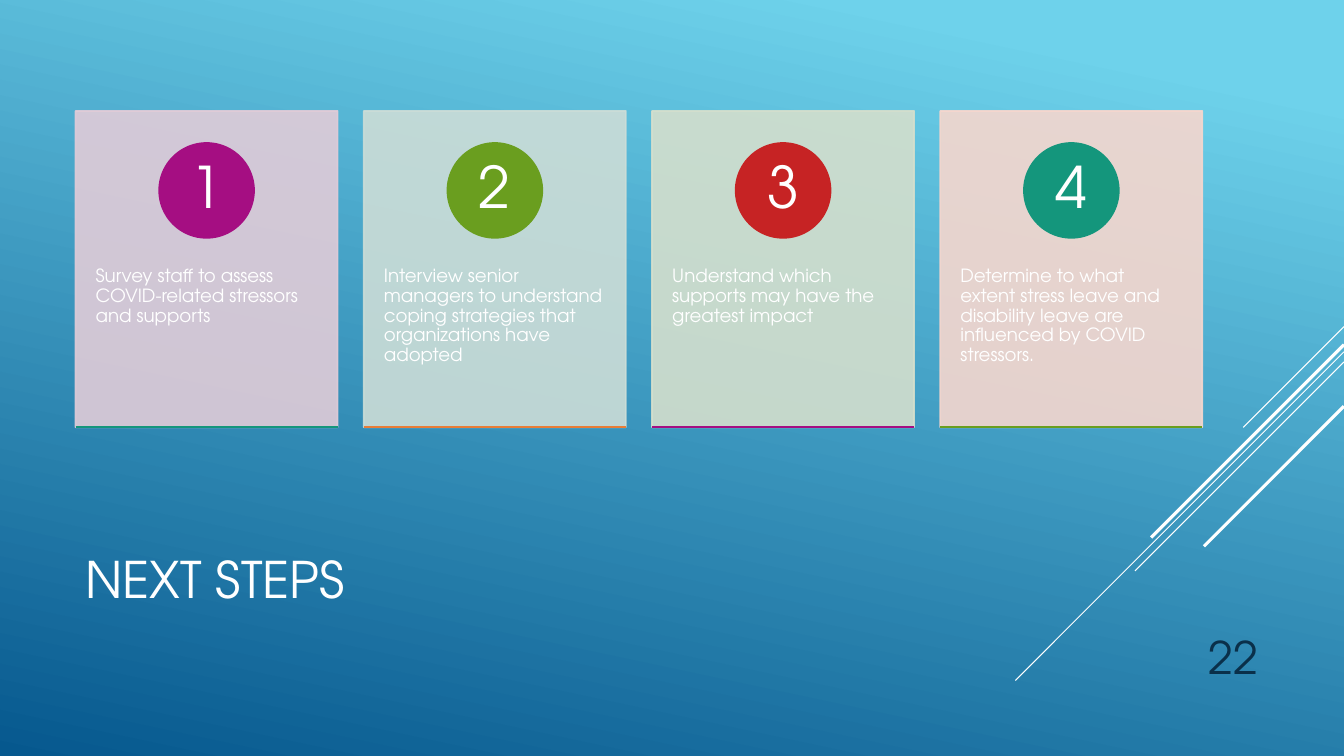
from lxml.etree import SubElement
from pptx import Presentation
from pptx.dml.color import RGBColor
from pptx.enum.shapes import MSO_CONNECTOR, MSO_SHAPE
from pptx.enum.text import MSO_ANCHOR, PP_ALIGN
from pptx.oxml.ns import qn
from pptx.util import Pt

FONT = "TeX Gyre Adventor"
WHITE = RGBColor(0xFF, 0xFF, 0xFF)
NAVY = RGBColor(0x0A, 0x30, 0x4A)
SKY = RGBColor(0x6E, 0xD2, 0xEB)
OCEAN = RGBColor(0x06, 0x58, 0x8E)
PURPLE = RGBColor(0xA5, 0x0E, 0x82)
GREEN = RGBColor(0x6A, 0x9E, 0x1F)
RED = RGBColor(0xC6, 0x23, 0x24)
TEAL = RGBColor(0x14, 0x96, 0x7C)
ORANGE = RGBColor(0xE8, 0x7D, 0x37)
MAUVE = RGBColor(0xE1, 0xCC, 0xD8)
MIST = RGBColor(0xCC, 0xDD, 0xD7)
SAGE = RGBColor(0xD4, 0xDF, 0xCD)
PEACH = RGBColor(0xF6, 0xD7, 0xCE)

STEPS = [
    ("Survey staff to assess COVID-related stressors and supports", MAUVE, PURPLE, TEAL),
    ("Interview senior managers to understand coping strategies that organizations have adopted",
     MIST, GREEN, ORANGE),
    ("Understand which supports may have the greatest impact", SAGE, RED, PURPLE),
    ("Determine to what extent stress leave and disability leave are influenced by COVID stressors.",
     PEACH, TEAL, GREEN),
]
SLIDE_WIDTH, SLIDE_HEIGHT = 960, 540
CARD_PITCH, CARD_WIDTH, CARD_HEIGHT = 205.9, 187.2, 226
BADGE_SIZE, BADGE_OFFSET = 67.7, 23
RAYS = [(233.3, 72, 0.75), (251.3, 234.7, 0.75), (258.5, 149.3, 0.75),
        (246.2, 137.7, 2.25), (290.2, 100, 2.25)]


def write_text(shape, text, size, color, align, frame_format, line_spacing=1.0):
    """Put one styled paragraph into a shape."""
    frame = shape.text_frame
    frame.word_wrap = True
    for name, value in frame_format.items():
        setattr(frame, name, value)
    paragraph = frame.paragraphs[0]
    paragraph.text = text
    paragraph.alignment = align
    paragraph.line_spacing = line_spacing
    font = paragraph.runs[0].font
    for name, value in {"name": FONT, "size": Pt(size)}.items():
        setattr(font, name, value)
    font.color.rgb = color


def add_filled_shape(slide, kind, box, color, opacity=100):
    """Add a preset shape whose fill and line share one colour."""
    shape = slide.shapes.add_shape(kind, *map(Pt, box))
    shape.shadow.inherit = False
    shape.fill.solid()
    shape.fill.fore_color.rgb = color
    shape.line.color.rgb = color
    shape.line.width = Pt(1.25)
    if opacity < 100:
        for color_element in shape.element.spPr.iter(qn("a:srgbClr")):
            SubElement(color_element, qn("a:alpha"), val=str(opacity * 1000))
    return shape


def add_line(slide, start, end, color, width):
    """Draw a straight line without a shadow."""
    connector = slide.shapes.add_connector(MSO_CONNECTOR.STRAIGHT, *map(Pt, start + end))
    connector.line.color.rgb = color
    connector.line.width = Pt(width)
    SubElement(connector.element.spPr, qn("a:effectLst"))


def add_background(slide):
    """Fill the slide with a slanted blue gradient."""
    fill = slide.background.fill
    fill.gradient()
    fill.gradient_angle = 258
    for stop, position, color in zip(fill.gradient_stops, (0.1, 1), (SKY, OCEAN)):
        stop.position = position
        stop.color.rgb = color


def add_rays(slide, right):
    """Draw diagonal lines running down and left from the right edge."""
    for top, length, width in RAYS:
        add_line(slide, (right, top), (right - length, top + length), WHITE, width)


def add_text_box(slide, box, text, size, color, align, anchor):
    """Add a free-standing line of text."""
    shape = slide.shapes.add_textbox(*map(Pt, box))
    write_text(shape, text, size, color, align, {"vertical_anchor": anchor})


def add_step_card(slide, left, top, number, step):
    """Add a tinted card with a numbered badge and a coloured base line."""
    text, tint, badge_color, base_color = step
    card = add_filled_shape(slide, MSO_SHAPE.RECTANGLE,
                            (left, top, CARD_WIDTH, CARD_HEIGHT), tint, 90)
    write_text(card, text, 13, WHITE, PP_ALIGN.LEFT, {
        "vertical_anchor": MSO_ANCHOR.TOP, "margin_left": Pt(14.4),
        "margin_right": Pt(14.4), "margin_top": Pt(111.6), "margin_bottom": Pt(26)}, 0.9)
    badge_left = left + (CARD_WIDTH - BADGE_SIZE) / 2
    badge = add_filled_shape(slide, MSO_SHAPE.OVAL,
                             (badge_left, top + BADGE_OFFSET, BADGE_SIZE, BADGE_SIZE), badge_color)
    write_text(badge, str(number), 41, WHITE, PP_ALIGN.CENTER, {
        "vertical_anchor": MSO_ANCHOR.MIDDLE, "margin_left": Pt(5),
        "margin_right": Pt(5), "margin_top": Pt(0.7), "margin_bottom": Pt(0.7)}, 0.9)
    base = top + CARD_HEIGHT
    add_line(slide, (left, base), (left + CARD_WIDTH, base), base_color, 1.25)


def add_step_row(slide, left, top):
    """Lay the step cards out at an equal pitch."""
    for index, step in enumerate(STEPS):
        add_step_card(slide, left + index * CARD_PITCH, top, index + 1, step)


def main():
    """Build and save the next steps slide."""
    presentation = Presentation()
    presentation.slide_width, presentation.slide_height = Pt(SLIDE_WIDTH), Pt(SLIDE_HEIGHT)
    slide = presentation.slides.add_slide(presentation.slide_layouts[6])
    add_background(slide)
    add_text_box(slide, (54, 353.5, 672, 118.8), "NEXT STEPS", 36, WHITE,
                 PP_ALIGN.LEFT, MSO_ANCHOR.MIDDLE)
    add_text_box(slide, (815.8, 439.2, 90, 52.6), "22", 32, NAVY,
                 PP_ALIGN.RIGHT, MSO_ANCHOR.BOTTOM)
    add_rays(slide, SLIDE_WIDTH)
    add_step_row(slide, 54, 79.2)
    presentation.save("out.pptx")


if __name__ == "__main__":
    main()
